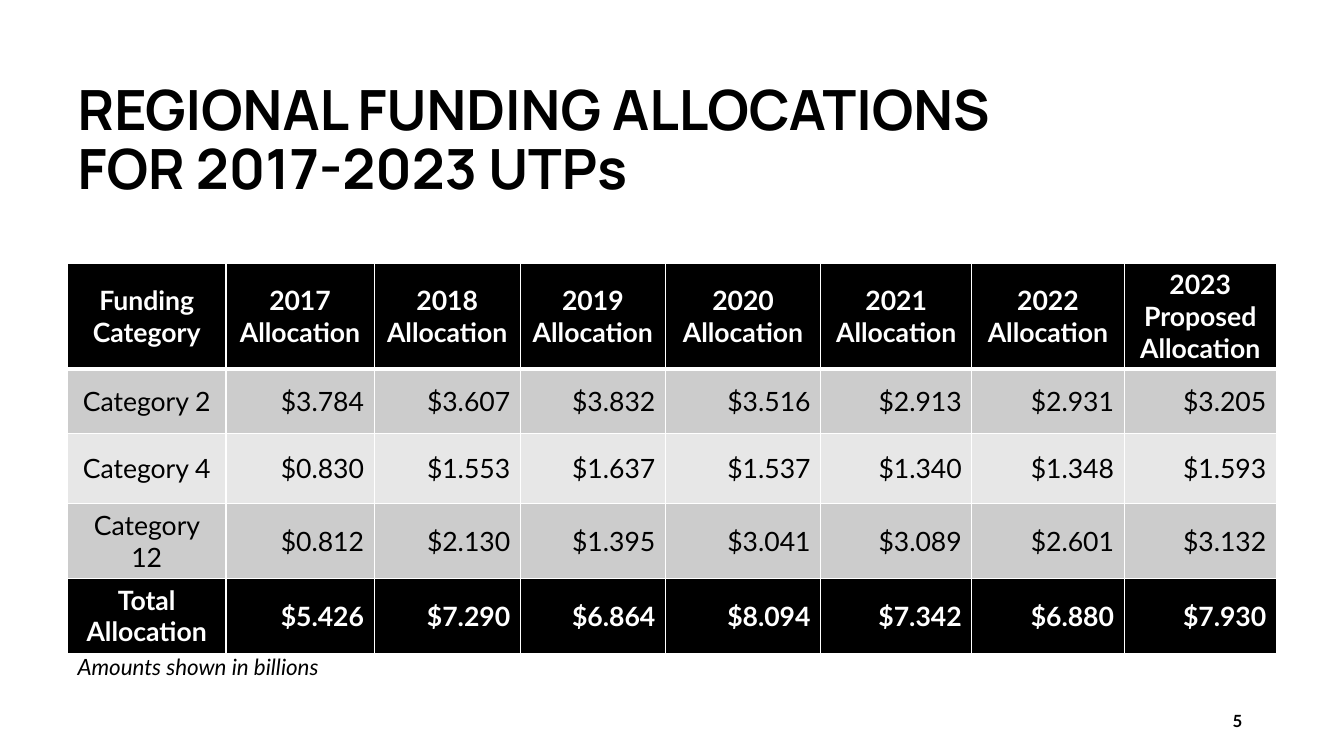
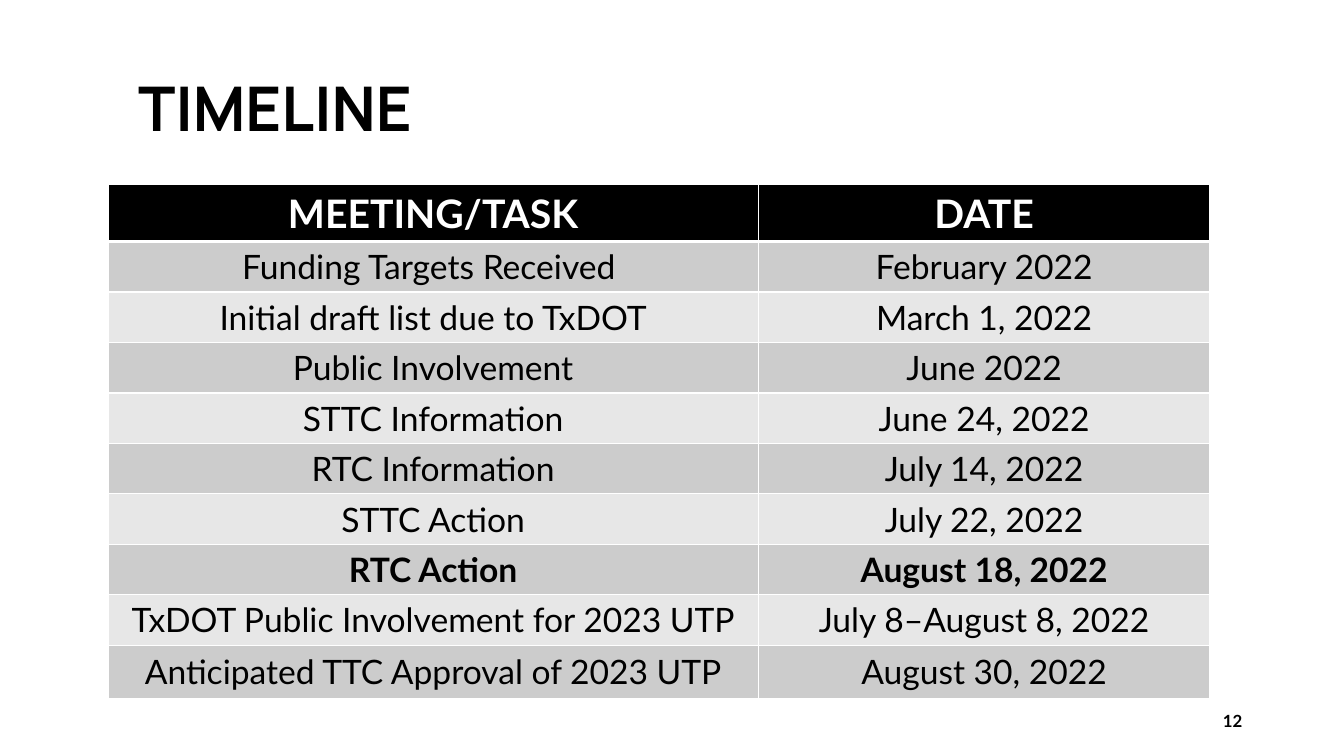
from lxml.etree import SubElement
from pptx import Presentation
from pptx.dml.color import RGBColor
from pptx.enum.text import MSO_ANCHOR, PP_ALIGN
from pptx.oxml.ns import qn
from pptx.util import Inches, Pt

WIDE, HIGH = Inches(13.33), Inches(7.5)
INK = {"black": "000000", "white": "FFFFFF", "dark": "CCCCCC", "light": "E7E7E7"}
HEAD, BODY = "Manrope", "Lato"
LEFT, MID, RIGHT = PP_ALIGN.LEFT, PP_ALIGN.CENTER, PP_ALIGN.RIGHT

FUNDS = [
    ["Funding Category", *(f"{year} Allocation" for year in range(2017, 2023)),
     "2023 Proposed Allocation"],
    ["Category 2", "$3.784", "$3.607", "$3.832", "$3.516", "$2.913", "$2.931", "$3.205"],
    ["Category 4", "$0.830", "$1.553", "$1.637", "$1.537", "$1.340", "$1.348", "$1.593"],
    ["Category 12", "$0.812", "$2.130", "$1.395", "$3.041", "$3.089", "$2.601", "$3.132"],
    ["Total Allocation", "$5.426", "$7.290", "$6.864", "$8.094", "$7.342", "$6.880", "$7.930"],
]
DATES = [
    ["MEETING/TASK", "DATE"],
    ["Funding Targets Received ", "February 2022"],
    ["Initial draft list due to TxDOT", "March 1, 2022"],
    ["Public Involvement", "June 2022"],
    ["STTC Information", "June 24, 2022"],
    ["RTC Information", "July 14, 2022"],
    ["STTC Action", "July 22, 2022"],
    ["RTC Action", "August 18, 2022"],
    ["TxDOT Public Involvement for 2023 UTP", "July 8–August 8, 2022"],
    ["Anticipated TTC Approval of 2023 UTP", "August 30, 2022"],
]


# Lengths are percent of the slide's width or height
def across(share):
    return int(WIDE * share / 100)


def down(share):
    return int(HIGH * share / 100)


def frame(left, top, wide, high):
    return across(left), down(top), across(wide), down(high)


def style(text, size, font=BODY, ink="black", bold=False, slant=False, align=LEFT):
    for para in text.paragraphs:
        para.alignment = align
        for run in para.runs:
            run.font.size, run.font.name = Pt(size), font
            run.font.bold, run.font.italic = bold, slant
            run.font.color.rgb = RGBColor.from_string(INK[ink])


def add_text(slide, words, box, size, **look):
    text = slide.shapes.add_textbox(*frame(*box)).text_frame
    text.word_wrap = True
    text.vertical_anchor = MSO_ANCHOR.MIDDLE
    text.text = words
    style(text, size, **look)


# Title and page number, alike on every slide
def add_slide(deck, title, box, size, page):
    slide = deck.slides.add_slide(deck.slide_layouts[5])
    shape = slide.shapes.title
    shape.left, shape.top, shape.width, shape.height = frame(*box)
    text = shape.text_frame
    text.text = title
    text.vertical_anchor = MSO_ANCHOR.MIDDLE
    text.paragraphs[0].line_spacing = 0.9
    style(text, size, font=HEAD, bold=True)
    add_text(slide, str(page), (70.67, 92.67, 22.5, 5.33), 12, bold=True, align=RIGHT)
    return slide


def add_rules(cell, top, base):
    props = cell._tc.get_or_add_tcPr()
    for side, width in (("L", 1), ("R", 1), ("T", top), ("B", base)):
        line = SubElement(props, qn(f"a:ln{side}"), w=str(Pt(width)))
        fill = SubElement(line, qn("a:solidFill"))
        SubElement(fill, qn("a:srgbClr"), val=INK["white"])


def add_grid(slide, data, spot, cols, rows, sizes, align, strong, black):
    """Sizes: header and body text; strong: bold rows; black: dark rows."""
    shape = slide.shapes.add_table(len(rows), len(cols), *frame(*spot, sum(cols), sum(rows)))
    table = shape.table
    table.horz_banding = False
    for col, share in zip(table.columns, cols):
        col.width = across(share)
    for r, (row, share) in enumerate(zip(table.rows, rows)):
        row.height = down(share)
        back = "black" if r in black else "dark" if r % 2 else "light"
        for c, cell in enumerate(row.cells):
            cell.text = data[r][c]
            cell.vertical_anchor = MSO_ANCHOR.MIDDLE
            add_rules(cell, 3 if r == 1 else 1, 3 if r == 0 else 1)
            cell.fill.solid()
            cell.fill.fore_color.rgb = RGBColor.from_string(INK[back])
            style(cell.text_frame, sizes[r > 0], bold=r in strong,
                  ink="white" if r in black else "black",
                  align=align if r and c else MID)


def add_funds(deck):
    slide = add_slide(deck, "REGIONAL FUNDING ALLOCATIONS FOR 2017-2023 UTPs",
                      (5.03, 6.53, 72, 24.53), 39.6, 5)
    add_grid(slide, FUNDS, (5.03, 34.8),
             [11.78, 11.03, 10.88, 10.8, 11.55, 11.25, 11.33, 11.33],
             [13.87, 8.53, 9.33, 9.87, 9.87],
             (19, 19), RIGHT, strong=(0, 4), black=(0, 4))
    add_text(slide, "Amounts shown in billions", (5.03, 86.27, 38.7, 3.73), 16, slant=True)


def add_dates(deck):
    slide = add_slide(deck, "TIMELINE", (9.53, 9.07, 81, 11.33), 44, 12)
    add_grid(slide, DATES, (8.03, 24.4), [48.39, 33.61],
             [7.47] + [6.67] * 8 + [7.07],
             (28, 24), MID, strong=(0, 7), black=(0,))


def main():
    deck = Presentation()
    deck.slide_width, deck.slide_height = WIDE, HIGH
    add_funds(deck)
    add_dates(deck)
    deck.save("out.pptx")


if __name__ == "__main__":
    main()
